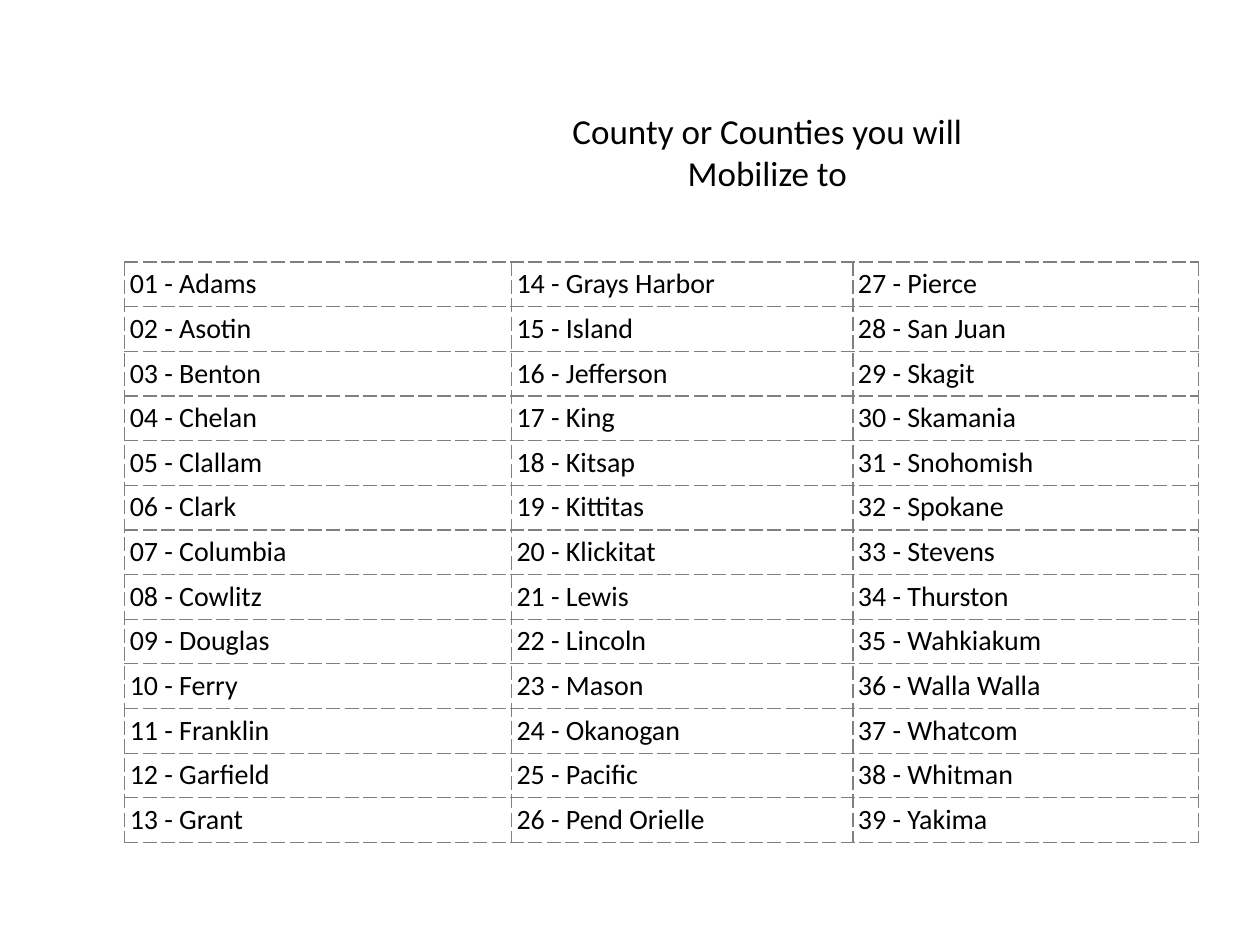
from dataclasses import dataclass

from lxml.etree import SubElement
from pptx import Presentation
from pptx.dml.color import RGBColor
from pptx.enum.text import MSO_ANCHOR, MSO_AUTO_SIZE, PP_ALIGN
from pptx.oxml.ns import qn
from pptx.slide import Slide
from pptx.table import Table, _Cell
from pptx.text.text import _Paragraph
from pptx.util import Inches, Pt


@dataclass(frozen=True)
class Theme:
    font: str = "Calibri"
    text: str = "000000"
    border: str = "808080"
    border_width: float = 0.75
    title_size: int = 20
    cell_size: int = 16


@dataclass(frozen=True)
class Box:
    left: float
    top: float
    width: float
    height: float


THEME = Theme()
TITLE_BOX = Box(4.11, 0.82, 3.96, 0.77)
TABLE_BOX = Box(0.99, 1.74, 8.52, 4.95)
COLUMN_WIDTHS = (3.07, 2.71, 2.74)
HEADER_HEIGHT = 0.34
HEADER_MARGIN = 0.01
CELL_MARGIN = 0.04
ROWS_PER_COLUMN = 13

COUNTIES = (
    "Adams", "Asotin", "Benton", "Chelan", "Clallam", "Clark", "Columbia",
    "Cowlitz", "Douglas", "Ferry", "Franklin", "Garfield", "Grant",
    "Grays Harbor", "Island", "Jefferson", "King", "Kitsap", "Kittitas",
    "Klickitat", "Lewis", "Lincoln", "Mason", "Okanogan", "Pacific",
    "Pend Orielle", "Pierce", "San Juan", "Skagit", "Skamania", "Snohomish",
    "Spokane", "Stevens", "Thurston", "Wahkiakum", "Walla Walla", "Whatcom",
    "Whitman", "Yakima",
)


def add_run(paragraph: _Paragraph, text: str, size: int) -> None:
    run = paragraph.add_run()
    run.text = text
    run.font.name = THEME.font
    run.font.size = Pt(size)
    run.font.bold = False
    run.font.color.rgb = RGBColor.from_string(THEME.text)


def format_cell(cell: _Cell, margin: float, dashed_sides: str) -> None:
    """Set margins, dashed borders on the named sides, and no fill."""
    cell.margin_left = cell.margin_right = Inches(margin)
    cell.margin_top = cell.margin_bottom = Inches(margin)
    properties = cell._tc.get_or_add_tcPr()
    for side in "LRTB":
        line = SubElement(properties, qn(f"a:ln{side}"), w=str(Pt(THEME.border_width)))
        if side in dashed_sides:
            fill = SubElement(line, qn("a:solidFill"))
            SubElement(fill, qn("a:srgbClr"), val=THEME.border)
            SubElement(line, qn("a:prstDash"), val="dash")
        else:
            SubElement(line, qn("a:noFill"))
    cell.fill.background()


def add_title(slide: Slide) -> None:
    title = slide.shapes.title
    title.left, title.top = Inches(TITLE_BOX.left), Inches(TITLE_BOX.top)
    title.width, title.height = Inches(TITLE_BOX.width), Inches(TITLE_BOX.height)
    frame = title.text_frame
    frame.word_wrap = True
    frame.auto_size = MSO_AUTO_SIZE.SHAPE_TO_FIT_TEXT
    frame.vertical_anchor = MSO_ANCHOR.TOP
    paragraph = frame.paragraphs[0]
    paragraph.alignment = PP_ALIGN.CENTER
    add_run(paragraph, "County or Counties you will Mobilize to", THEME.title_size)


def add_county_table(slide: Slide) -> Table:
    table = slide.shapes.add_table(
        ROWS_PER_COLUMN + 1, len(COLUMN_WIDTHS),
        Inches(TABLE_BOX.left), Inches(TABLE_BOX.top),
        Inches(TABLE_BOX.width), Inches(TABLE_BOX.height),
    ).table
    table.first_row = table.horz_banding = False
    for column, width in zip(table.columns, COLUMN_WIDTHS):
        column.width = Inches(width)
    body_height = (TABLE_BOX.height - HEADER_HEIGHT) / ROWS_PER_COLUMN
    for index, row in enumerate(table.rows):
        row.height = Inches(body_height if index else HEADER_HEIGHT)

    # Empty header row, one cell wide
    for cell in table.rows[0].cells:
        format_cell(cell, HEADER_MARGIN, "B")
    table.cell(0, 0).merge(table.cell(0, len(COLUMN_WIDTHS) - 1))

    # Numbered counties, running down each column
    for index, county in enumerate(COUNTIES):
        column, row = divmod(index, ROWS_PER_COLUMN)
        cell = table.cell(row + 1, column)
        format_cell(cell, CELL_MARGIN, "LRTB")
        add_run(cell.text_frame.paragraphs[0], f"{index + 1:02d} - {county}", THEME.cell_size)
    return table


def main() -> None:
    presentation = Presentation()
    presentation.slide_width, presentation.slide_height = Inches(10), Inches(7.5)
    slide = presentation.slides.add_slide(presentation.slide_layouts[5])
    add_county_table(slide)
    add_title(slide)
    presentation.save("out.pptx")


if __name__ == "__main__":
    main()
